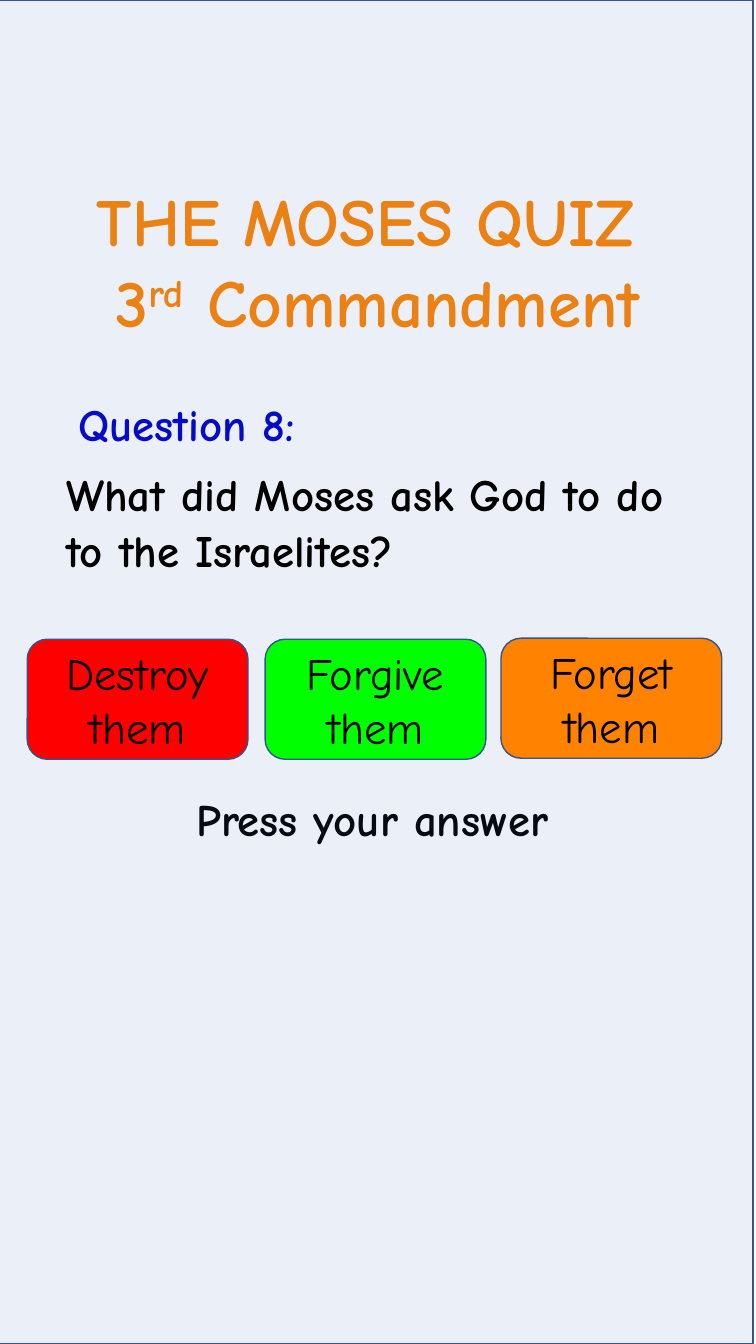
"""Build a portrait quiz slide with a question and three answer buttons."""
from dataclasses import dataclass

from lxml import etree
from pptx import Presentation
from pptx.dml.color import RGBColor
from pptx.enum.shapes import MSO_SHAPE
from pptx.enum.text import MSO_ANCHOR, MSO_AUTO_SIZE, PP_ALIGN
from pptx.oxml.ns import qn
from pptx.shapes.autoshape import Shape
from pptx.slide import Slide
from pptx.text.text import TextFrame
from pptx.util import Inches, Pt

RECTANGLE = MSO_SHAPE.RECTANGLE
ROUNDED = MSO_SHAPE.ROUNDED_RECTANGLE
MIDDLE = MSO_ANCHOR.MIDDLE
FIT_SHAPE = MSO_AUTO_SIZE.SHAPE_TO_FIT_TEXT
CENTER = PP_ALIGN.CENTER
LEFT = PP_ALIGN.LEFT

FONT = "Comic Neue"
ORANGE = "FF8200"
BLACK = "000000"
BORDER = "325491"
PAGE_WIDTH, PAGE_HEIGHT = 7.5, 13.33
BUTTON_WIDTH, BUTTON_HEIGHT = 2.19, 1.19


@dataclass(frozen=True)
class Span:
    text: str
    superscript: bool = False


@dataclass(frozen=True)
class Label:
    left: float
    top: float
    width: float
    height: float
    lines: tuple[tuple[Span, ...], ...]
    color: str = BLACK
    size: int = 32
    wrap: bool = True
    spacing: float | Pt | None = None
    before: float = 0


@dataclass(frozen=True)
class Button:
    left: float
    top: float
    text: str
    color: str


TITLE = Label(0.3, 1.73, 6.89, 1.72,
              ((Span("THE MOSES QUIZ "),),
               (Span("3"), Span("rd", True), Span(" Commandment"))),
              color=ORANGE, size=48, wrap=False)
HEADING = Label(0.47, 3.89, 2.77, 0.64, ((Span("Question 8:"),),),
                color="0000CC", wrap=False)
PROMPT = Label(1.85, 7.86, 4.22, 0.72, ((Span("Press your answer"),),),
               spacing=0.9, before=7.5)
QUESTION = Label(0.56, 4.56, 6.36, 1.46,
                 ((Span("What did Moses ask God to do to the Israelites?"),),),
                 spacing=Pt(40), before=7.5)
BUTTONS = (
    Button(0.27, 6.34, "Destroy them", "FF0000"),
    Button(2.63, 6.34, "Forgive them", "00FF00"),
    Button(4.97, 6.33, "Forget them", ORANGE),
)


def rgb(color: str) -> RGBColor:
    """Turn a hex string into a colour."""
    return RGBColor.from_string(color)


def write_lines(frame: TextFrame, lines: tuple[tuple[Span, ...], ...], align: PP_ALIGN,
                color: str, size: int, bold: bool) -> None:
    """Write each line as a paragraph, run by run."""
    for index, spans in enumerate(lines):
        para = frame.add_paragraph() if index else frame.paragraphs[0]
        para.alignment = align
        for span in spans:
            run = para.add_run()
            run.text = span.text
            run.font.name = FONT
            run.font.size = Pt(size)
            run.font.bold = bold
            run.font.color.rgb = rgb(color)
            if span.superscript:
                run.font._element.set("baseline", "30000")


def add_label(page: Slide, label: Label) -> None:
    """Add a text box, centred when it does not wrap."""
    box = page.shapes.add_textbox(Inches(label.left), Inches(label.top),
                                  Inches(label.width), Inches(label.height))
    frame = box.text_frame
    frame.word_wrap = label.wrap
    if not label.wrap:
        frame.auto_size = FIT_SHAPE
    write_lines(frame, label.lines, LEFT if label.wrap else CENTER,
                label.color, label.size, True)
    for para in frame.paragraphs:
        para.line_spacing = label.spacing
        para.space_before = Pt(label.before)


def add_panel(page: Slide, kind: MSO_SHAPE, left: float, top: float,
              width: float, height: float, color: str) -> Shape:
    """Add a filled shape with the common border."""
    panel = page.shapes.add_shape(kind, Inches(left), Inches(top),
                                  Inches(width), Inches(height))
    panel.shadow.inherit = False
    panel.fill.solid()
    panel.fill.fore_color.rgb = rgb(color)
    panel.line.color.rgb = rgb(BORDER)
    panel.line.width = Pt(1)
    return panel


def add_tint(page: Slide) -> None:
    """Lay a translucent blue sheet over the page."""
    tint = add_panel(page, RECTANGLE, -0.03, 0, PAGE_WIDTH, PAGE_HEIGHT, "4472C4")
    fill = tint.element.spPr.find(qn("a:solidFill"))
    etree.SubElement(fill[0], qn("a:alpha"), val="10000")


def add_button(page: Slide, button: Button) -> None:
    """Add a rounded answer button."""
    panel = add_panel(page, ROUNDED, button.left, button.top,
                      BUTTON_WIDTH, BUTTON_HEIGHT, button.color)
    frame = panel.text_frame
    frame.word_wrap = True
    frame.vertical_anchor = MIDDLE
    write_lines(frame, ((Span(button.text),),), CENTER, BLACK, 32, False)


def main() -> None:
    """Build and save the deck."""
    deck = Presentation()
    deck.slide_width = Inches(PAGE_WIDTH)
    deck.slide_height = Inches(PAGE_HEIGHT)
    page = deck.slides.add_slide(deck.slide_layouts[6])
    for label in (TITLE, HEADING, PROMPT):
        add_label(page, label)
    add_tint(page)
    add_label(page, QUESTION)
    for button in BUTTONS:
        add_button(page, button)
    deck.save("out.pptx")


if __name__ == "__main__":
    main()
